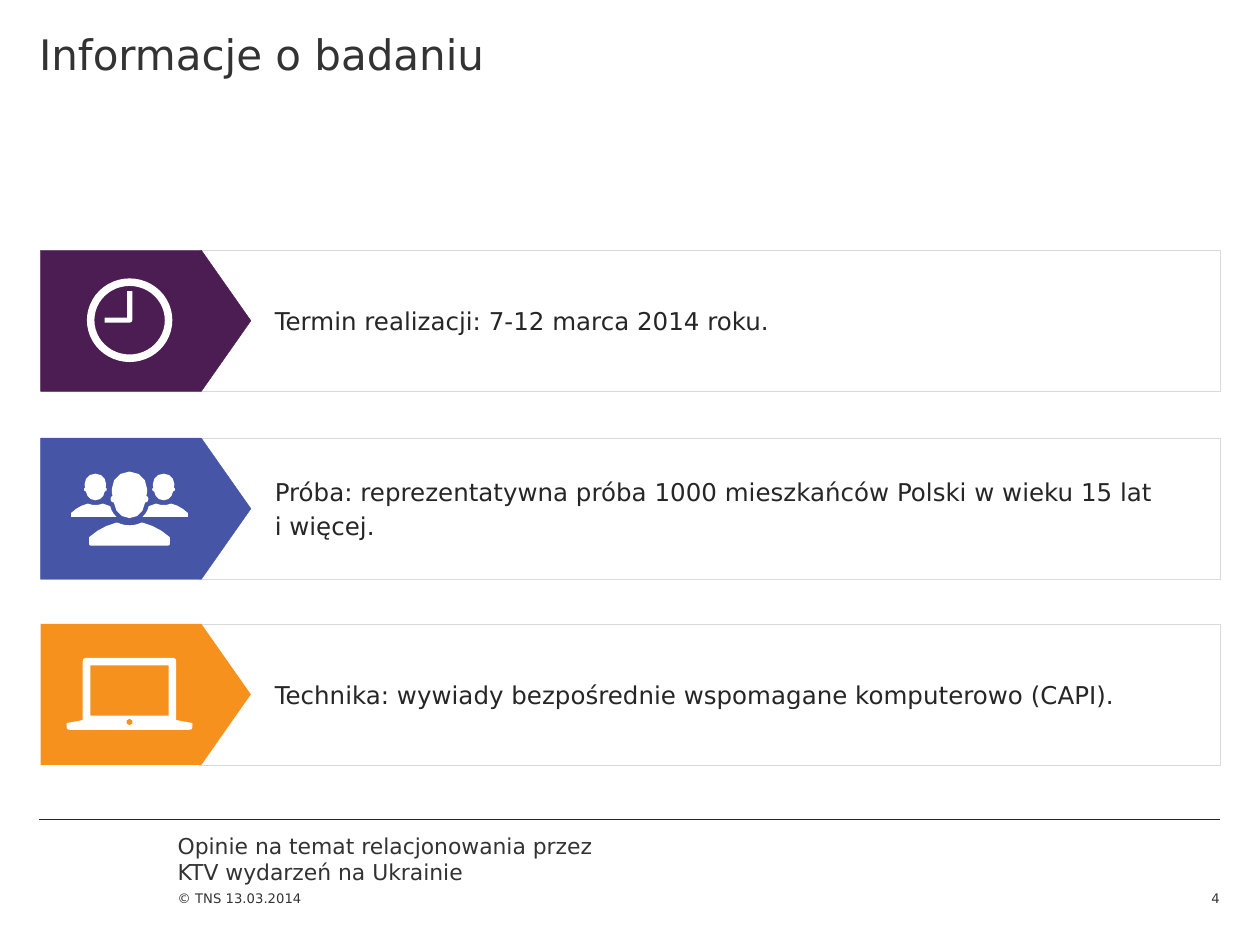
"""Build the survey information slide with three icon banners."""
import pptx
import pptx.util
import pptx.dml.color
import pptx.oxml.ns
import pptx.enum.shapes
import pptx.enum.text
import lxml.etree

Pt = pptx.util.Pt
SHAPE = pptx.enum.shapes.MSO_SHAPE
ANCHOR = pptx.enum.text.MSO_ANCHOR
ALIGN = pptx.enum.text.PP_ALIGN

FONT = "DejaVu Sans"
COLORS = {"text": "333333", "body": "262626", "border": "D9D9D9", "white": "FFFFFF",
          "purple": "4C1D52", "blue": "4655A5", "orange": "F7911E"}
ROWS = [
    (143, "purple", "purple", ["Termin realizacji: 7-12 marca 2014 roku."]),
    (250.4, "blue", "blue", ["Próba: reprezentatywna próba 1000 mieszkańców Polski w wieku 15 lat",
                             "i więcej."]),
    (356.5, "orange", None, ["Technika: wywiady bezpośrednie wspomagane komputerowo (CAPI)."]),
]
LABELS = [
    ((101.5, 475.5, 238.3, 30.2), "Opinie na temat relacjonowania przez KTV wydarzeń na Ukrainie",
     12.5, 0, ANCHOR.TOP, ALIGN.LEFT),
    ((101.5, 498.2, 200.2, 19.6), "© TNS 13.03.2014", 7.5, 0, ANCHOR.BOTTOM, ALIGN.LEFT),
    ((22.3, 0, 675.4, 101.5), "Informacje o badaniu", 24, 16.1, ANCHOR.TOP, ALIGN.LEFT),
    ((657.4, 498.2, 39.6, 19.8), "4", 7.5, 0, ANCHOR.BOTTOM, ALIGN.RIGHT),
]

ICON_X = 74
CLOCK_FACE = (49.7, 159.1, 48.8, 47.8)
CLOCK_HANDS = [(-1.3, 166.3), (-1.3, 181.5), (-14.2, 181.5), (-14.2, 184.3), (0.2, 184.3),
               (1, 184.3, 1.6, 183.7, 1.6, 182.9), (1.6, 166.3)]
HALF_HEAD = [(0, 0), (3.5, 0, 6.1, 2.6, 6.1, 5.8), (6.1, 6.5, 6.1, 7.2, 5.8, 7.9),
             (6.2, 8.1, 6.5, 8.4, 6.5, 8.9), (6.5, 9.7, 6.1, 10.1, 5.4, 10.1),
             (5, 13.1, 2.9, 15.2, 0, 15.2)]
HEADS = [(-19.5, 270.7, 1, 1), (19.5, 270.7, 1, 1), (0, 269.5, 1.66, 1.75)]
HALF_BUST = [(0, 300.2), (2.3, 300.2, 4.5, 299.7, 6.5, 298.8), (7, 298.6, 7.4, 298.6, 7.9, 298.8),
             (13.5, 300.2, 18.5, 303, 22.7, 306.7), (23, 306.9, 23.1, 307.2, 23.1, 307.5),
             (23.1, 310.8), (23.1, 311.4, 22.6, 311.8, 22, 311.8), (0, 311.8)]
SIDE_BUST = [(7.4, 295.4), (9.3, 293.8, 10.4, 291.7, 11, 289.3), (12.4, 288.8, 13.8, 288.3, 15.2, 287.8),
             (18, 289, 21, 289, 23.8, 287.8), (27.3, 288.6, 30.4, 290.4, 33.4, 293.2), (33.4, 295.4)]
HALF_LAPTOP = [
    [(0, 376), (22.5, 376), (26, 375.8, 26.7, 376, 26.7, 378), (26.7, 411.4),
     (29.8, 412.3, 33, 412.5, 35.9, 413.2), (35.9, 415.5), (35.9, 416.9, 35, 417, 34, 417), (0, 417)],
    [(0, 380.2), (22.3, 380.2), (22.3, 409), (0, 409)],
    [(0, 410.7), (2.4, 410.7, 2.4, 414.5, 0, 414.5)],
]


def color(name):
    return pptx.dml.color.RGBColor.from_string(COLORS[name])


def flatten(steps, count=3):
    points = []
    for step in steps:
        if len(step) == 2:
            points.append(step)
            continue
        x0, y0 = points[-1]
        x1, y1, x2, y2, x3, y3 = step
        for i in range(1, count + 1):
            t = i / count
            a, b, c, d = (1 - t) ** 3, 3 * t * (1 - t) ** 2, 3 * t * t * (1 - t), t ** 3
            points.append((a * x0 + b * x1 + c * x2 + d * x3, a * y0 + b * y1 + c * y2 + d * y3))
    return points


def flip(points):
    return [(-x, y) for x, y in reversed(points)]


def whole(half):
    points = flatten(half)
    return points + flip(points)[1:-1]


def style(sp, fill, line=None):
    sp.shadow.inherit = False
    sp.fill.solid()
    sp.fill.fore_color.rgb = color(fill)
    if line:
        sp.line.color.rgb = color(line)
        sp.line.width = Pt(0.25)
    else:
        sp.line.fill.background()


def add_preset(s, kind, box, fill, line=None, adjust=None):
    sp = s.shapes.add_shape(kind, *map(Pt, box))
    style(sp, fill, line)
    if adjust is not None:
        sp.adjustments[0] = adjust
    return sp


def add_outline(s, contours):
    scaled = [[((ICON_X + x) * 100, y * 100) for x, y in points] for points in contours]
    builder = s.shapes.build_freeform(*scaled[0][0], scale=Pt(1) / 100)
    for i, points in enumerate(scaled):
        if i:
            builder.move_to(*points[0])
        builder.add_line_segments(points[1:], close=True)
    style(builder.convert_to_shape(), "white")


def write(sp, lines, size, ink, insets, anchor, align=ALIGN.LEFT):
    tf = sp.text_frame
    tf.word_wrap = True
    tf.vertical_anchor = anchor
    tf.margin_left, tf.margin_top, tf.margin_right, tf.margin_bottom = map(Pt, insets)
    for i, line in enumerate(lines):
        p = tf.add_paragraph() if i else tf.paragraphs[0]
        p.alignment = align
        if i:
            p.space_before = Pt(size * 0.2)
        r = p.add_run()
        r.text = line
        r.font.name = FONT
        r.font.size = Pt(size)
        r.font.color.rgb = color(ink)


def add_icons(s):
    add_preset(s, SHAPE.DONUT, CLOCK_FACE, "white", adjust=0.09)
    add_outline(s, [flatten(CLOCK_HANDS)])
    side = flatten(SIDE_BUST)
    for bust in (side, flip(side), whole(HALF_BUST)):
        add_outline(s, [bust])
    for dx, top, sx, sy in HEADS:
        add_outline(s, [[(dx + x * sx, top + y * sy) for x, y in whole(HALF_HEAD)]])
    add_outline(s, [whole(half) for half in HALF_LAPTOP])


def main():
    prs = pptx.Presentation()
    prs.slide_width, prs.slide_height = Pt(720), Pt(540)
    s = prs.slides.add_slide(prs.slide_layouts[6])

    rule = s.shapes.add_connector(pptx.enum.shapes.MSO_CONNECTOR.STRAIGHT,
                                  Pt(22.3), Pt(468.3), Pt(697), Pt(468.3))
    rule.line.color.rgb = color("body")
    rule.line.width = Pt(0.75)
    lxml.etree.SubElement(rule._element.spPr, pptx.oxml.ns.qn("a:effectLst"))

    for top, fill, line, lines in ROWS:
        panel = add_preset(s, SHAPE.RECTANGLE, (113.8, top, 583.5, 80.6), "white", "border")
        write(panel, lines, 14, "body", (43.2, 17.3, 7.2, 17.3), ANCHOR.MIDDLE)
        add_preset(s, SHAPE.PENTAGON, (23.2, top, 120.2, 80.6), fill, line, 0.351)
    add_icons(s)

    for box, text, size, inset, anchor, align in LABELS:
        sp = s.shapes.add_textbox(*map(Pt, box))
        write(sp, [text], size, "text", (0, inset, 0, 0), anchor, align)
    prs.save("out.pptx")


if __name__ == "__main__":
    main()
